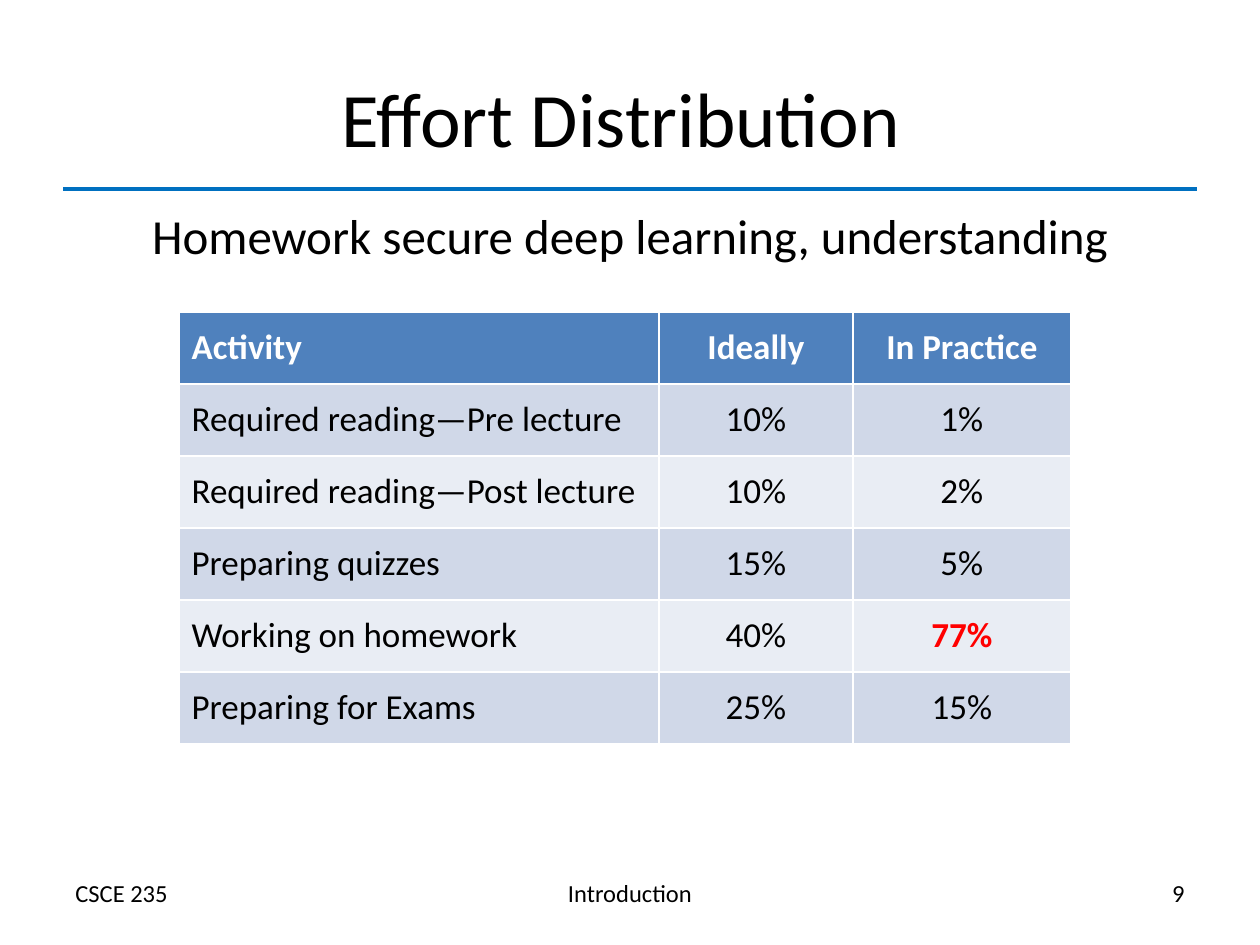
from lxml.etree import SubElement
from pptx import Presentation
from pptx.dml.color import RGBColor
from pptx.enum.shapes import MSO_CONNECTOR
from pptx.enum.text import MSO_ANCHOR, PP_ALIGN
from pptx.oxml.ns import qn
from pptx.util import Emu, Pt

FONT = "Calibri"
BLACK, WHITE, RED, BLUE = "000000", "FFFFFF", "FF0000", "0070C0"
HEADER, BAND_DARK, BAND_LIGHT = "4F81BD", "D0D8E8", "E9EDF4"
LEFT, CENTER, RIGHT = PP_ALIGN.LEFT, PP_ALIGN.CENTER, PP_ALIGN.RIGHT

COLUMNS = [480, 194, 218]
EFFORT = [
    ("Activity", "Ideally", "In Practice"),
    ("Required reading—Pre lecture", "10%", "1%"),
    ("Required reading—Post lecture", "10%", "2%"),
    ("Preparing quizzes", "15%", "5%"),
    ("Working on homework", "40%", "77%"),
    ("Preparing for Exams", "25%", "15%"),
]
KEY_CELL = (4, 2)


def px(n):
    """Turn pixels at 126 to the inch into EMU."""
    return Emu(round(n * 914400 / 126))


def color(value):
    """Turn a hex string into a colour."""
    return RGBColor.from_string(value)


def write(tf, text, size, align=LEFT, ink=BLACK, bold=False):
    """Fill a text frame with one styled paragraph and return it."""
    p = tf.paragraphs[0]
    p.text = text
    p.alignment = align
    p.font.name = FONT
    p.font.size = Pt(size)
    p.font.bold = bold
    p.font.color.rgb = color(ink)
    return p


def add_text(s, box, text, size, align=LEFT, anchor=MSO_ANCHOR.TOP):
    """Add a wrapped text box and return its paragraph."""
    tf = s.shapes.add_textbox(*map(px, box)).text_frame
    tf.word_wrap = True
    tf.vertical_anchor = anchor
    return write(tf, text, size, align)


def add_heading(s, x, y, w):
    """Place the title, the rule under it and the subtitle."""
    add_text(s, (x, y, w, 157), "Effort Distribution ", 44, CENTER, MSO_ANCHOR.MIDDLE)
    rule = s.shapes.add_connector(
        MSO_CONNECTOR.STRAIGHT, px(x), px(y + 151), px(x + w), px(y + 151))
    rule.line.color.rgb = color(BLUE)
    rule.line.width = Pt(2)
    SubElement(rule._element.spPr, qn("a:effectLst"))
    p = add_text(s, (x, y + 161, w, 95),
                 "Homework secure deep learning, understanding", 28, CENTER)
    p.space_before = Pt(5.6)


def add_effort_table(s, x, y, row_height):
    """Place the banded table of activities and effort shares."""
    table = s.shapes.add_table(
        len(EFFORT), len(COLUMNS), px(x), px(y),
        px(sum(COLUMNS)), px(row_height * len(EFFORT))).table
    for column, width in zip(table.columns, COLUMNS):
        column.width = px(width)
    for i, row in enumerate(EFFORT):
        fill = HEADER if i == 0 else BAND_DARK if i % 2 else BAND_LIGHT
        for j, text in enumerate(row):
            key = (i, j) == KEY_CELL
            ink = WHITE if i == 0 else RED if key else BLACK
            cell = table.cell(i, j)
            cell.fill.solid()
            cell.fill.fore_color.rgb = color(fill)
            cell.vertical_anchor = MSO_ANCHOR.MIDDLE
            write(cell.text_frame, text, 20, CENTER if j else LEFT, ink, i == 0 or key)


def add_footer(s, x, y, w):
    """Place the course, topic and page number across the bottom."""
    width = 368
    step = (w - width) / 2
    parts = [("CSCE 235", LEFT), ("Introduction", CENTER), ("9", RIGHT)]
    for i, (text, align) in enumerate(parts):
        add_text(s, (x + i * step, y, width, 43), text, 14, align)


def main():
    """Build the slide and save it."""
    prs = Presentation()
    prs.slide_width, prs.slide_height = px(1260), px(945)
    s = prs.slides.add_slide(prs.slide_layouts[6])
    add_heading(s, 63, 38, 1134)
    add_effort_table(s, 179, 312, 72)
    add_footer(s, 63, 872, 1134)
    prs.save("out.pptx")


if __name__ == "__main__":
    main()
